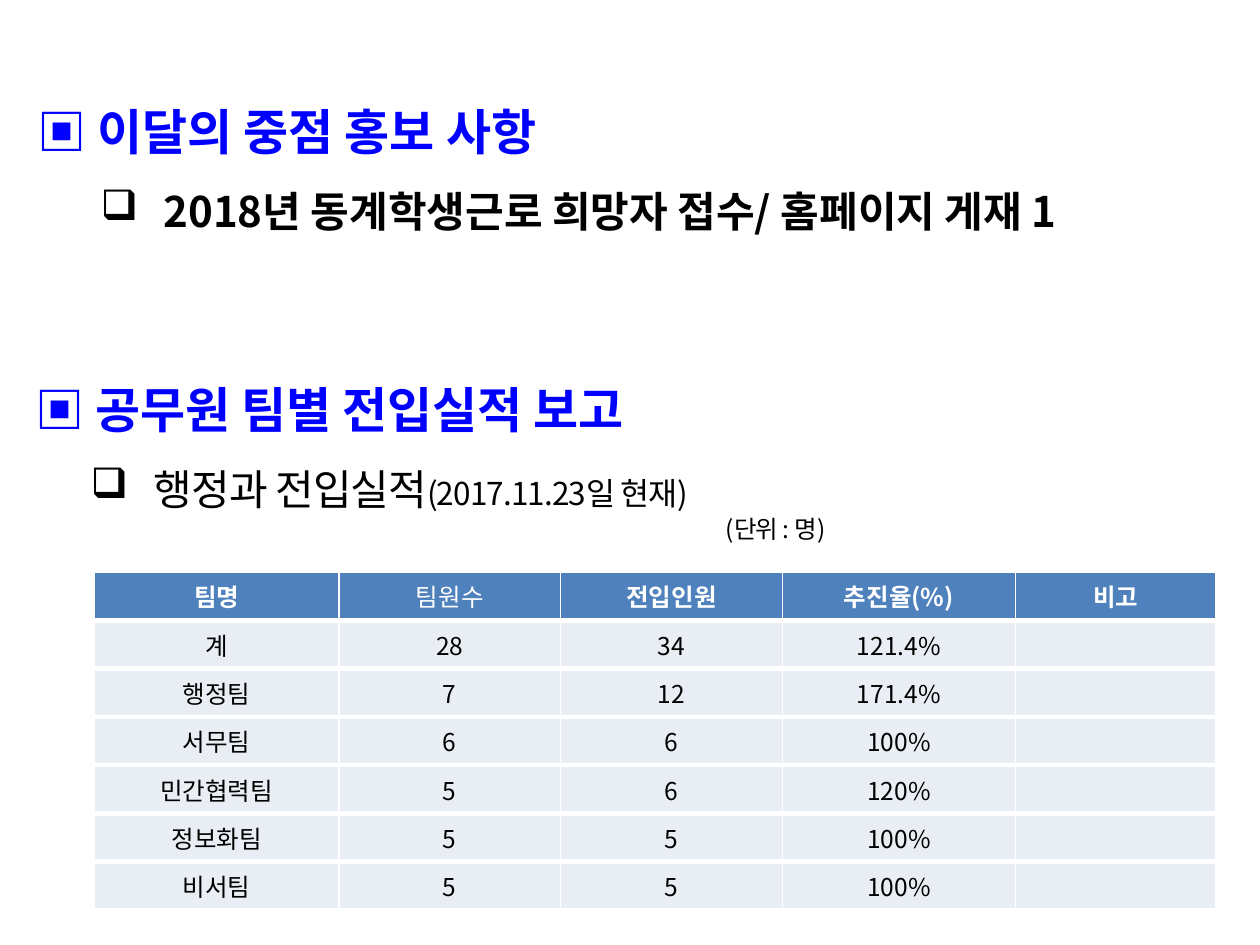
"""Build the monthly promotion and team transfer report slide."""
from lxml import etree
from pptx import Presentation
from pptx.dml.color import RGBColor
from pptx.enum.text import MSO_ANCHOR, PP_ALIGN
from pptx.oxml.ns import qn
from pptx.util import Pt

CENTER = PP_ALIGN.CENTER
MIDDLE = MSO_ANCHOR.MIDDLE
FONT = "Noto Sans CJK KR"
BLUE, BLACK, WHITE = "0000FF", "000000", "FFFFFF"
HEADER_FILL, BODY_FILL = "4F81BD", "E9EDF4"

HEADING = dict(size=28, color=BLUE, bold=True, spacing=1.5)
ITEM = dict(size=24, spacing=1.5, left=72, hanging=-36, bullet="❑")
TIGHT = dict(tracking=-50)

SECTIONS = [
    ((14.4, 37.44, 679, 145.44), [
        (["▣ 이달의 중점 홍보 사항"], HEADING),
        (["2018년 동계학생근로 희망자 접수/ 홈페이지 게재 1"], ITEM | dict(bold=True)),
    ]),
    ((8.64, 196.56, 711.36, 128), [
        (["▣ 공무원 팀별 전입실적 보고"], HEADING | dict(left=40.32, hanging=-36)),
        (["행정과 전입실적", ("(2017.11.23일 현재)", 18)], ITEM | TIGHT),
        (["(단위 : 명)"], dict(size=14, left=399) | TIGHT),
    ]),
]

TABLE_LEFT, TABLE_TOP, ROW_HEIGHT = 54, 326.88, 27.6
COLUMN_WIDTHS = [139.68, 126.72, 126.72, 133.2, 114.48]
PLAIN_HEADER = "팀원수"
RESULTS = [
    ("팀명", PLAIN_HEADER, "전입인원", "추진율(%)", "비고"),
    ("계", "28", "34", "121.4%", ""),
    ("행정팀", "7", "12", "171.4%", ""),
    ("서무팀", "6", "6", "100%", ""),
    ("민간협력팀", "5", "6", "120%", ""),
    ("정보화팀", "5", "5", "100%", ""),
    ("비서팀", "5", "5", "100%", ""),
]


def rgb(value):
    return RGBColor.from_string(value)


def set_font(paragraph, size, color=BLACK, bold=False, tracking=0):
    font = paragraph.font
    font.name, font.size, font.bold = FONT, Pt(size), bold
    font.color.rgb = rgb(color)
    defaults = paragraph._p.pPr.find(qn("a:defRPr"))
    etree.SubElement(defaults, qn("a:ea"), typeface=FONT)
    if tracking:
        defaults.set("spc", str(tracking))
        for run in paragraph.runs:
            run._r.get_or_add_rPr().set("spc", str(tracking))


def write_line(paragraph, parts, spacing=1.0, left=0, hanging=0, bullet=None, **font):
    for part in parts:
        run = paragraph.add_run()
        if isinstance(part, tuple):
            run.text, size = part
            run.font.size = Pt(size)
        else:
            run.text = part
    paragraph.line_spacing = spacing
    properties = paragraph._p.get_or_add_pPr()
    properties.set("marL", str(Pt(left)))
    properties.set("indent", str(Pt(hanging)))
    if bullet:
        bullet_color = etree.SubElement(properties, qn("a:buClr"))
        etree.SubElement(bullet_color, qn("a:srgbClr"), val=BLACK)
        etree.SubElement(properties, qn("a:buChar"), char=bullet)
    set_font(paragraph, **font)


def add_section(slide, place, lines):
    frame = slide.shapes.add_textbox(*map(Pt, place)).text_frame
    frame.word_wrap = True
    for index, (parts, style) in enumerate(lines):
        paragraph = frame.add_paragraph() if index else frame.paragraphs[0]
        write_line(paragraph, parts, **style)


def set_borders(cell, widths):
    properties = cell._tc.get_or_add_tcPr()
    for index, (side, width) in enumerate(widths.items()):
        line = etree.Element(qn(f"a:ln{side}"), w=str(Pt(width)))
        fill = etree.SubElement(line, qn("a:solidFill"))
        etree.SubElement(fill, qn("a:srgbClr"), val=WHITE)
        properties.insert(index, line)


def fill_cell(cell, text, is_header):
    cell.text = text
    cell.vertical_anchor = MIDDLE
    cell.margin_top = cell.margin_bottom = Pt(2)
    cell.fill.solid()
    cell.fill.fore_color.rgb = rgb(HEADER_FILL if is_header else BODY_FILL)
    paragraph = cell.text_frame.paragraphs[0]
    paragraph.alignment = CENTER
    set_font(paragraph, 14, WHITE if is_header else BLACK,
             is_header and text != PLAIN_HEADER)
    set_borders(cell, dict(L=1, R=1, T=1 if is_header else 3, B=3))


def add_results(slide):
    table = slide.shapes.add_table(
        len(RESULTS), len(COLUMN_WIDTHS), Pt(TABLE_LEFT), Pt(TABLE_TOP),
        Pt(sum(COLUMN_WIDTHS)), Pt(ROW_HEIGHT * len(RESULTS))).table
    for column, width in zip(table.columns, COLUMN_WIDTHS):
        column.width = Pt(width)
    for row_index, (row, texts) in enumerate(zip(table.rows, RESULTS)):
        row.height = Pt(ROW_HEIGHT)
        for cell, text in zip(row.cells, texts):
            fill_cell(cell, text, row_index == 0)


def main():
    deck = Presentation()
    deck.slide_width, deck.slide_height = Pt(720), Pt(540)
    slide = deck.slides.add_slide(deck.slide_layouts[6])
    for place, lines in SECTIONS:
        add_section(slide, place, lines)
    add_results(slide)
    deck.save("out.pptx")


if __name__ == "__main__":
    main()
